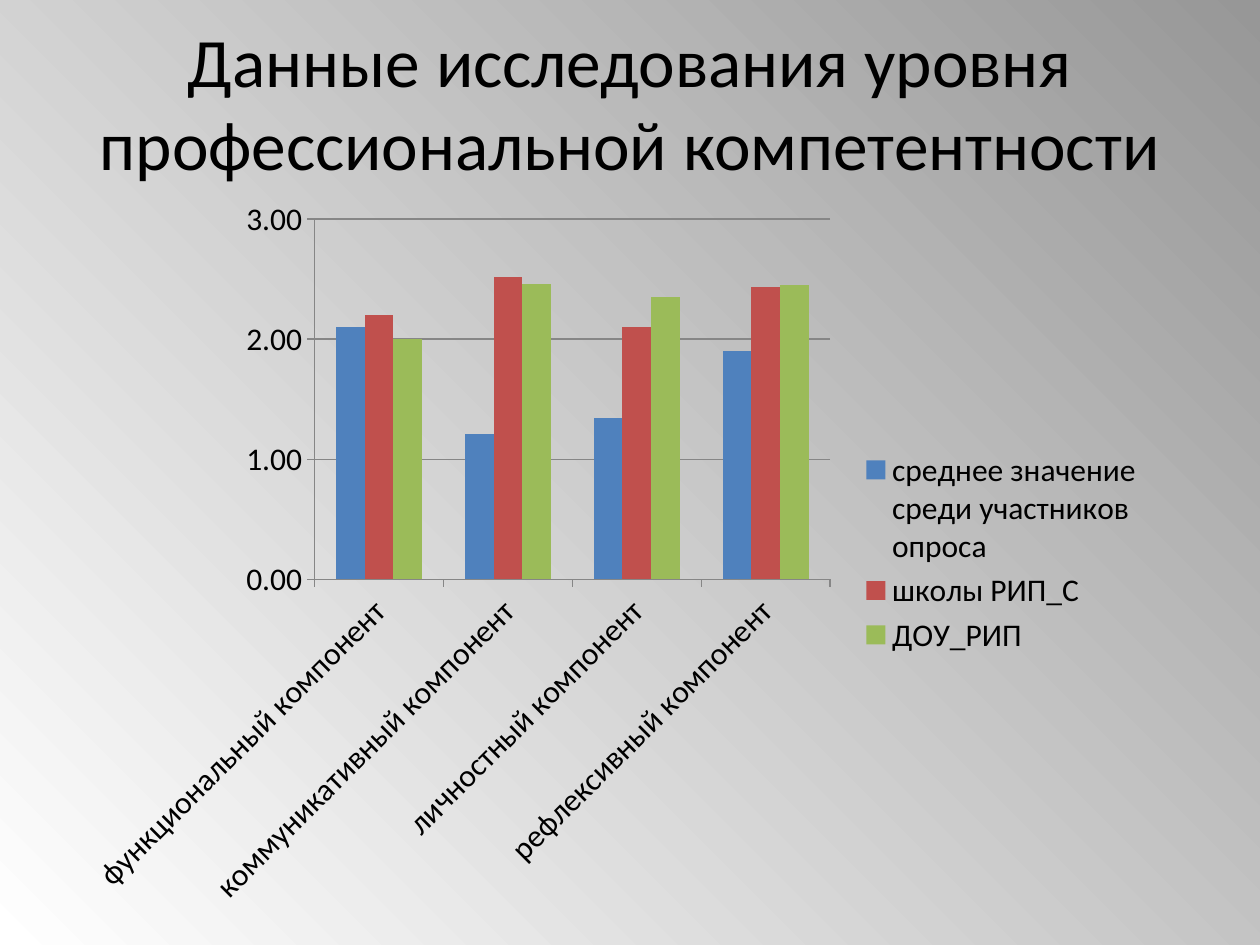
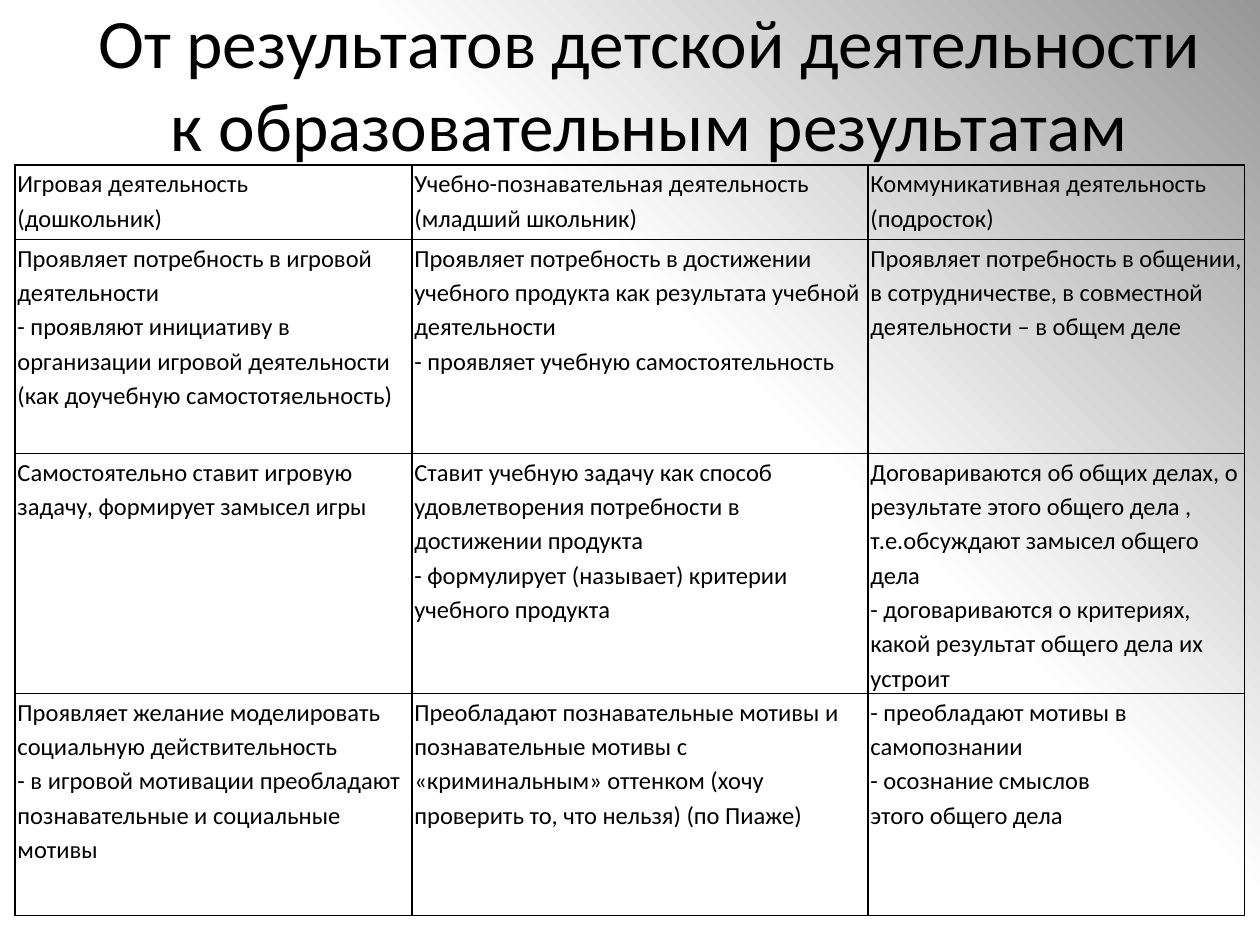
"""Build two slides: a chart of skill levels and a table of outcomes by age."""
import dataclasses

import pptx
import pptx.chart.data
import pptx.dml.color
import pptx.enum.chart
import pptx.enum.text
import pptx.oxml
import pptx.oxml.ns
import pptx.util

Pt = pptx.util.Pt
RGB = pptx.dml.color.RGBColor.from_string


@dataclasses.dataclass(frozen=True)
class Theme:
    """Colours and type sizes that the slides share."""
    font: str = "Calibri"
    ink: str = "000000"
    light: str = "FFFFFF"
    dark: str = "979797"
    rule: str = "868686"
    bars: tuple = ("4F81BD", "C0504D", "9BBB59")
    title: float = 39.6
    label: float = 18
    cell: float = 14


theme = Theme()


def style(font, size):
    """Give a font the shared face and ink."""
    font.name = theme.font
    font.size = Pt(size)
    font.color.rgb = RGB(theme.ink)


def add_page(deck, text, box, start):
    """Add a slide with a corner glow and a title."""
    page = deck.slides.add_slide(deck.slide_layouts[5])
    page.background.fill.solid()
    holder = page.element.xpath("./p:cSld/p:bg/p:bgPr")[0]
    glow = pptx.oxml.parse_xml(
        f'<a:gradFill {pptx.oxml.ns.nsdecls("a")} rotWithShape="1"><a:gsLst>'
        f'<a:gs pos="{start * 1000}"><a:srgbClr val="{theme.light}"/></a:gs>'
        f'<a:gs pos="100000"><a:srgbClr val="{theme.dark}"/></a:gs></a:gsLst>'
        '<a:path path="circle"><a:fillToRect t="100000" r="100000"/></a:path>'
        '</a:gradFill>')
    holder.replace(holder[0], glow)
    title = page.shapes.title
    title.left, title.top, title.width, title.height = map(Pt, box)
    frame = title.text_frame
    frame.text = text
    frame.word_wrap = True
    frame.auto_size = pptx.enum.text.MSO_AUTO_SIZE.NONE
    frame.vertical_anchor = pptx.enum.text.MSO_ANCHOR.MIDDLE
    frame.paragraphs[0].alignment = pptx.enum.text.PP_ALIGN.CENTER
    style(frame.paragraphs[0].font, theme.title)
    return page


deck = pptx.Presentation()
deck.slide_width, deck.slide_height = Pt(720), Pt(540)

page = add_page(deck, "Данные исследования уровня профессиональной компетентности",
                (36, 21.6, 648, 72.7), 0)
data = pptx.chart.data.CategoryChartData(number_format="0.00")
data.categories = [f"{kind} компонент" for kind in
                   ("функциональный", "коммуникативный", "личностный", "рефлексивный")]
data.add_series("среднее значение среди участников опроса", (2.1, 1.21, 1.34, 1.9))
data.add_series("школы РИП_С", (2.2, 2.52, 2.1, 2.43))
data.add_series("ДОУ_РИП", (2, 2.46, 2.35, 2.45))
chart = page.shapes.add_chart(pptx.enum.chart.XL_CHART_TYPE.COLUMN_CLUSTERED,
                              Pt(42.5), Pt(105.8), Pt(618.5), Pt(419.8), data).chart
style(chart.font, theme.label)
chart.has_title = False
chart.has_legend = True
chart.legend.position = pptx.enum.chart.XL_LEGEND_POSITION.RIGHT
chart.legend.include_in_layout = False
plot = chart.plots[0]
plot.gap_width = 150
plot.vary_by_categories = False
for bar, tone in zip(plot.series, theme.bars):
    bar.format.fill.solid()
    bar.format.fill.fore_color.rgb = RGB(tone)
scale = chart.value_axis
scale.minimum_scale, scale.maximum_scale, scale.major_unit = 0, 3, 1
scale.has_major_gridlines = True
scale.tick_labels.number_format = "0.00"
scale.tick_labels.number_format_is_linked = False
for axis in (scale, chart.category_axis):
    axis.major_tick_mark = pptx.enum.chart.XL_TICK_MARK.OUTSIDE
for part in (scale, chart.category_axis, scale.major_gridlines):
    part.format.line.color.rgb = RGB(theme.rule)
    part.format.line.width = Pt(0.75)

page = add_page(deck, "От результатов детской деятельности к образовательным результатам",
                (36.7, 0, 668.8, 94.3), 59)
rows = (
    ("Игровая деятельность\n(дошкольник)",
     "Учебно-познавательная деятельность (младший школьник)",
     "Коммуникативная деятельность (подросток)"),
    ("Проявляет потребность в игровой деятельности\n"
     "- проявляют инициативу в организации игровой деятельности "
     "(как доучебную самостотяельность)",
     "Проявляет потребность в достижении учебного продукта "
     "как результата учебной деятельности\n"
     "- проявляет учебную самостоятельность",
     "Проявляет потребность в общении, в сотрудничестве, "
     "в совместной деятельности – в общем деле"),
    ("Самостоятельно ставит игровую задачу, формирует замысел игры",
     "Ставит учебную задачу как способ удовлетворения потребности "
     "в достижении продукта\n"
     "- формулирует (называет) критерии учебного продукта",
     "Договариваются об общих делах, о результате этого общего дела , "
     "т.е.обсуждают замысел общего дела\n"
     "- договариваются о критериях, какой результат общего дела их устроит"),
    ("Проявляет желание моделировать социальную действительность\n"
     "- в игровой мотивации преобладают познавательные и социальные мотивы",
     "Преобладают познавательные мотивы и познавательные мотивы "
     "с «криминальным» оттенком (хочу проверить то, что нельзя) (по Пиаже)",
     "- преобладают мотивы в самопознании\n- осознание смыслов\nэтого общего дела"),
)
widths = (226.8, 260.6, 215.3)
heights = (42.5, 122.4, 136.8, 126.7)
table = page.shapes.add_table(len(rows), len(widths), Pt(8.6), Pt(94.3),
                              Pt(sum(widths)), Pt(sum(heights))).table
table.first_row = table.horz_banding = False
for column, width in zip(table.columns, widths):
    column.width = Pt(width)
for line, height, texts in zip(table.rows, heights, rows):
    line.height = Pt(height)
    for cell, text in zip(line.cells, texts):
        cell.margin_left = cell.margin_right = Pt(1.4)
        cell.margin_top = cell.margin_bottom = 0
        cell.text_frame.text = text
        for para in cell.text_frame.paragraphs:
            para.line_spacing = 1.15
            style(para.font, theme.cell)
        props = cell._tc.get_or_add_tcPr()
        for side in "LRTB":
            props.append(pptx.oxml.parse_xml(
                f'<a:ln{side} {pptx.oxml.ns.nsdecls("a")} w="{Pt(1)}"><a:solidFill>'
                f'<a:srgbClr val="{theme.ink}"/></a:solidFill></a:ln{side}>'))
        cell.fill.background()

deck.save("out.pptx")
